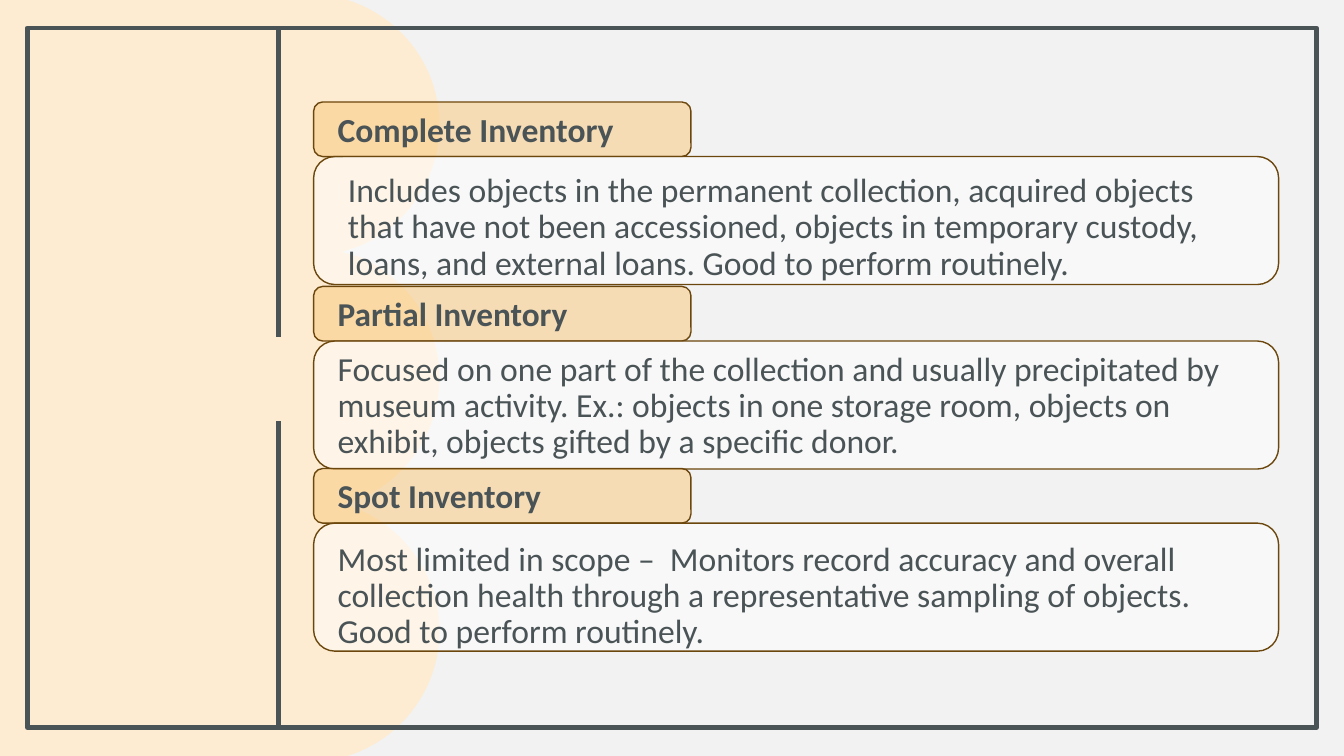
from dataclasses import dataclass

from lxml.etree import SubElement
from pptx import Presentation
from pptx.dml.color import RGBColor
from pptx.enum.shapes import MSO_CONNECTOR, MSO_SHAPE
from pptx.oxml.ns import qn
from pptx.util import Emu, Pt

COLUMNS, ROWS = 160, 90
CELL = 76200
COLORS = {
    "background": "F2F2F2",
    "scallop": "FDECD2",
    "slate": "4A5356",
    "tab": "FAC777",
    "panel": "FFFFFF",
    "outline": "6C470D",
}
FONT = "Calibri"
CARD_LEFT = 37.34
TAB_WIDTH, TAB_HEIGHT = 44.92, 6.5
PANEL_WIDTH, PANEL_HEIGHT = 114.88, 15.24
HEADING_LEFT = 39.02
DETAIL_WIDTH, DETAIL_HEIGHT = 108, 14.88
RAIL_COLUMN = 33.12
RAIL_SPANS = ((3.36, 40.08), (50.16, 86.88))

Point = tuple[float, float]
Box = tuple[float, float, float, float]
Segment = tuple[Point, ...]

SCALLOP_START = (0, 0)
SCALLOP_UPPER: tuple[Segment, ...] = (
    ((32.16, 0),),
    ((36.36, 0),),
    ((41.28, 0),),
    ((41.4, 0),),
    ((47.76, 2.04), (52.32, 7.92), (52.32, 14.88)),
    ((52.32, 21.36), (48.36, 26.88), (42.84, 29.28)),
    ((40.68, 30),),
    ((42.84, 30.6),),
    ((48.36, 33), (52.32, 38.52), (52.32, 45)),
)


@dataclass(frozen=True)
class Inventory:
    heading: str
    detail: str
    tab_row: float
    heading_row: float
    detail_row: float
    heading_width: float = 38.64
    heading_size: float = 23.8
    heading_spacing: float = 0.8
    detail_left: float = HEADING_LEFT


INVENTORIES = (
    Inventory(
        "Complete Inventory",
        "Includes objects in the permanent collection, acquired objects that have "
        "not been accessioned, objects in temporary custody, loans, and external "
        "loans. Good to perform routinely.",
        12.14, 12.36, 20.08,
        heading_width=42, heading_size=24, heading_spacing=1.0, detail_left=40.24,
    ),
    Inventory(
        "Partial Inventory",
        "Focused on one part of the collection and usually precipitated by museum "
        "activity. Ex.: objects in one storage room, objects on exhibit, objects "
        "gifted by a specific donor.",
        34.1, 35.22, 41.33,
    ),
    Inventory(
        "Spot Inventory",
        "Most limited in scope –  Monitors record accuracy and overall collection "
        "health through a representative sampling of objects. Good to perform "
        "routinely.",
        55.78, 56.88, 63.96,
    ),
)


def grid(cells: float) -> Emu:
    return Emu(round(cells * CELL))


def color(name: str) -> RGBColor:
    return RGBColor.from_string(COLORS[name])


def mirrored(start: Point, segments: tuple[Segment, ...]) -> list[Segment]:
    starts = [start, *(segment[-1] for segment in segments[:-1])]
    return [
        tuple((x, ROWS - y) for x, y in (*reversed(segment[:-1]), origin))
        for origin, segment in reversed(list(zip(starts, segments)))
    ]


def draw_scallop(slide) -> None:
    segments = [*SCALLOP_UPPER, *mirrored(SCALLOP_START, SCALLOP_UPPER)]
    builder = slide.shapes.build_freeform(*map(grid, SCALLOP_START), scale=1.0)
    builder.add_line_segments(
        [tuple(map(grid, segment[-1])) for segment in segments], close=True)
    scallop = builder.convert_to_shape()
    strokes = list(scallop._element.iter(qn("a:lnTo")))
    for stroke, segment in zip(strokes, segments):
        if len(segment) == 3:
            stroke.tag = qn("a:cubicBezTo")
            for spot in list(stroke):
                stroke.remove(spot)
            for x, y in segment:
                SubElement(stroke, qn("a:pt"), x=str(grid(x)), y=str(grid(y)))
    scallop.shadow.inherit = False
    scallop.fill.solid()
    scallop.fill.fore_color.rgb = color("scallop")
    scallop.line.fill.background()


def draw_frame(slide) -> None:
    frame = slide.shapes.add_shape(
        MSO_SHAPE.RECTANGLE, *map(grid, (3.28, 3.34, 153.44, 83.28)))
    frame.shadow.inherit = False
    frame.fill.background()
    frame.line.color.rgb = color("slate")
    frame.line.width = Pt(3.5)
    for top, bottom in RAIL_SPANS:
        rail = slide.shapes.add_connector(
            MSO_CONNECTOR.STRAIGHT, *map(grid, (RAIL_COLUMN, top, RAIL_COLUMN, bottom)))
        rail.line.color.rgb = color("slate")
        rail.line.width = Pt(3.5)
        SubElement(rail._element.spPr, qn("a:effectLst"))


def draw_card(slide, box: Box, fill: str) -> None:
    card = slide.shapes.add_shape(MSO_SHAPE.ROUNDED_RECTANGLE, *map(grid, box))
    card.shadow.inherit = False
    card.fill.solid()
    card.fill.fore_color.rgb = color(fill)
    tint = card._element.spPr.find(qn("a:solidFill")).find(qn("a:srgbClr"))
    SubElement(tint, qn("a:alpha"), val="50000")
    card.line.color.rgb = color("outline")
    card.line.width = Pt(1)


def write(slide, box: Box, text: str, size: float, spacing: float,
          bold: bool = False, after: float = 0) -> None:
    frame = slide.shapes.add_textbox(*map(grid, box)).text_frame
    frame.word_wrap = True
    frame.text = text
    paragraph = frame.paragraphs[0]
    paragraph.line_spacing = spacing
    paragraph.space_after = Pt(after)
    font = paragraph.runs[0].font
    font.name = FONT
    font.size = Pt(size)
    font.bold = bold
    font.color.rgb = color("slate")


def draw_inventory(slide, item: Inventory) -> None:
    draw_card(slide, (CARD_LEFT, item.tab_row, TAB_WIDTH, TAB_HEIGHT), "tab")
    draw_card(slide, (CARD_LEFT, item.tab_row + TAB_HEIGHT, PANEL_WIDTH, PANEL_HEIGHT),
              "panel")
    write(slide, (HEADING_LEFT, item.heading_row, item.heading_width, 5.4),
          item.heading, item.heading_size, item.heading_spacing, bold=True, after=6)
    write(slide, (item.detail_left, item.detail_row, DETAIL_WIDTH, DETAIL_HEIGHT),
          item.detail, 24, 0.9)


def main() -> None:
    deck = Presentation()
    deck.slide_width, deck.slide_height = grid(COLUMNS), grid(ROWS)
    slide = deck.slides.add_slide(deck.slide_layouts.get_by_name("Blank"))
    slide.background.fill.solid()
    slide.background.fill.fore_color.rgb = color("background")
    draw_scallop(slide)
    draw_frame(slide)
    for item in INVENTORIES:
        draw_inventory(slide, item)
    deck.save("out.pptx")


if __name__ == "__main__":
    main()
